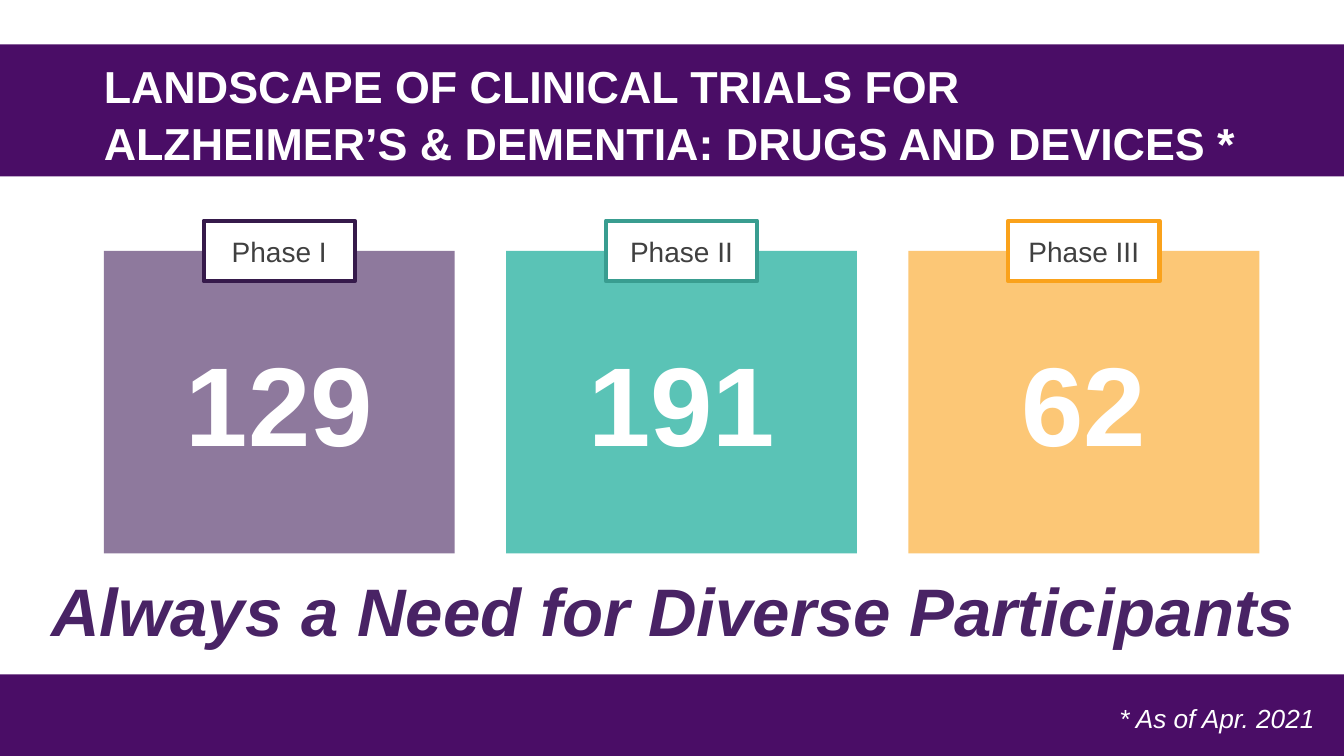
from dataclasses import dataclass

from pptx import Presentation
from pptx import util as u
from pptx.dml.color import RGBColor
from pptx.enum import shapes, text


@dataclass(frozen=True)
class Theme:
    font: str = "Arial"
    white: str = "FFFFFF"
    band: str = "4A0D66"
    slogan: str = "492365"
    label: str = "404040"
    title_size: float = 32
    number_size: float = 80
    label_size: float = 20
    slogan_size: float = 48
    note_size: float = 18.7


class TrialsSlide:
    """Draw bands, boxes and text on one slide in a shared style."""

    def __init__(self, deck, theme):
        self.theme = theme
        self.page = deck.slides.add_slide(deck.slide_layouts[6])

    def fill_text(self, frame, lines, size, color, align, bold=False, italic=False, spacing=None):
        frame.text = lines
        for para in frame.paragraphs:
            para.alignment = align
            para.line_spacing = spacing
            for span in para.runs:
                span.font.name = self.theme.font
                span.font.size = u.Pt(size)
                span.font.bold = bold
                span.font.italic = italic
                span.font.color.rgb = RGBColor.from_string(color)

    def block(self, left, top, width, height, fill, line=None):
        box = self.page.shapes.add_shape(
            shapes.MSO_SHAPE.RECTANGLE, *map(u.Inches, (left, top, width, height)))
        box.shadow.inherit = False
        box.fill.solid()
        box.fill.fore_color.rgb = RGBColor.from_string(fill)
        if line:
            box.line.color.rgb = RGBColor.from_string(line)
            box.line.width = u.Pt(3)
        else:
            box.line.fill.background()
        box.text_frame.vertical_anchor = text.MSO_ANCHOR.MIDDLE
        return box

    def caption(self, left, top, width, height, lines, size, color,
                align=text.PP_ALIGN.LEFT, margin=0, wrap=True, **style):
        box = self.page.shapes.add_textbox(*map(u.Inches, (left, top, width, height)))
        frame = box.text_frame
        frame.word_wrap = wrap
        frame.margin_left = frame.margin_right = u.Inches(margin)
        frame.margin_top = frame.margin_bottom = u.Inches(margin / 2)
        self.fill_text(frame, lines, size, color, align, **style)

    def number_card(self, left, number, fill):
        card = self.block(left, 2.49, 3.48, 3, fill)
        self.fill_text(card.text_frame, number, self.theme.number_size, self.theme.white,
                       text.PP_ALIGN.CENTER, bold=True)

    def phase_tag(self, left, phase, line):
        tag = self.block(left, 2.19, 1.5, 0.6, self.theme.white, line)
        self.fill_text(tag.text_frame, phase, self.theme.label_size, self.theme.label,
                       text.PP_ALIGN.CENTER)


def main():
    deck = Presentation()
    deck.slide_width = u.Inches(13.33)
    deck.slide_height = u.Inches(7.5)
    theme = Theme()
    slide = TrialsSlide(deck, theme)

    slide.block(0, 6.69, 13.33, 0.81, theme.band)
    slide.block(0, 0.44, 13.33, 1.31, theme.band)
    slide.caption(10.85, 6.97, 2.44, 0.31, "* As of Apr. 2021", theme.note_size,
                  theme.white, text.PP_ALIGN.CENTER, italic=True)

    phases = [
        ("Phase I", "129", "8E799D", "361A4B"),
        ("Phase II", "191", "5AC3B6", "399D90"),
        ("Phase III", "62", "FCC776", "FAA21B"),
    ]
    for column, (phase, number, fill, line) in enumerate(phases):
        left = 1.03 + 3.99 * column
        slide.number_card(left, number, fill)
        slide.phase_tag(left + 0.99, phase, line)

    slide.caption(0.41, 5.6, 12.68, 0.91, "Always a Need for Diverse Participants",
                  theme.slogan_size, theme.slogan, margin=0.1, wrap=False,
                  bold=True, italic=True)
    slide.caption(1.03, 0.56, 12.3, 1.08,
                  "LANDSCAPE OF CLINICAL TRIALS FOR\n"
                  "ALZHEIMER’S & DEMENTIA: DRUGS AND DEVICES *",
                  theme.title_size, theme.white, bold=True, spacing=1.05)
    deck.save("out.pptx")


if __name__ == "__main__":
    main()
